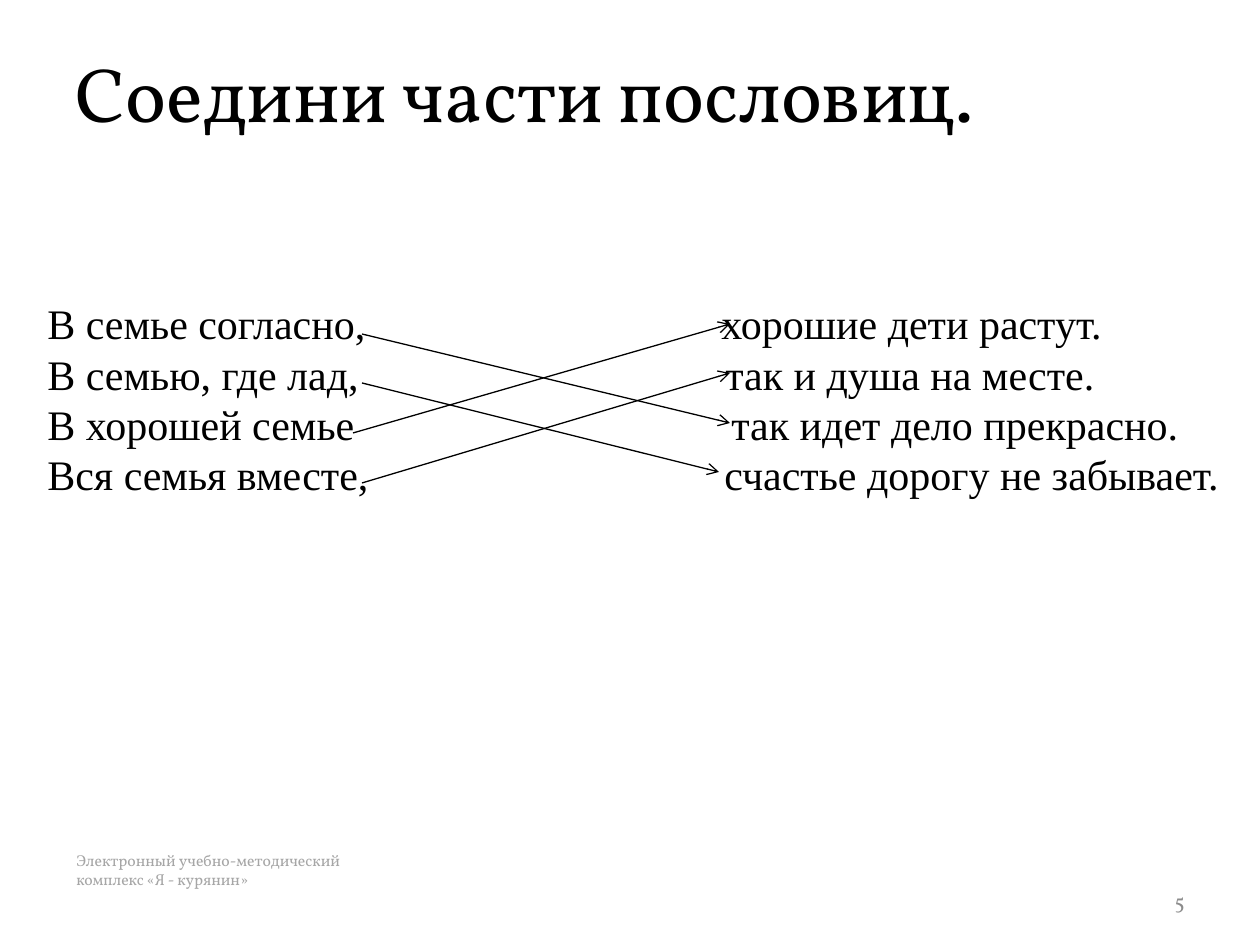
from dataclasses import dataclass

from lxml import etree
from pptx import Presentation, util as u
from pptx.dml.color import RGBColor
from pptx.enum import shapes, text
from pptx.oxml.ns import qn

BLACK = RGBColor(0x00, 0x00, 0x00)
SILVER = RGBColor(0xA6, 0xA6, 0xA6)
GRAY = RGBColor(0x8C, 0x8C, 0x8C)
HEAD = "Vollkorn"
BODY = "Times New Roman"
LEFT, MID = text.PP_ALIGN.LEFT, text.MSO_ANCHOR.MIDDLE


def px(n: int) -> int:
    return round(n * 914400 / 126)


@dataclass
class Label:
    box: tuple[int, int, int, int]
    words: str
    size: int
    color: RGBColor
    align: text.PP_ALIGN = LEFT
    anchor: text.MSO_ANCHOR = MID


@dataclass
class Row:
    start: str
    end: str
    tab: int


@dataclass
class Arrow:
    x1: int
    y1: int
    x2: int
    y2: int


LABELS = [
    Label((64, 845, 630, 50), "Электронный учебно-методический\vкомплекс «Я - курянин»",
          9, SILVER, anchor=text.MSO_ANCHOR.TOP),
    Label((63, 38, 934, 107), "Соедини части пословиц.", 44, BLACK),
    Label((903, 876, 294, 50), "5", 12, GRAY, text.PP_ALIGN.RIGHT),
]
ROWS = [
    Row("В семье согласно,", "хорошие дети растут.", 674),
    Row("В семью, где лад,", "так и душа на месте.", 678),
    Row("В хорошей семье", "так идет дело прекрасно.", 684),
    Row("Вся семья вместе,", "счастье дорогу не забывает.", 677),
]
ARROWS = [
    Arrow(362, 334, 730, 423),
    Arrow(362, 383, 719, 472),
    Arrow(353, 433, 730, 324),
    Arrow(362, 483, 730, 373),
]


def add_frame(slide, box: tuple[int, int, int, int], anchor):
    frame = slide.shapes.add_textbox(*map(px, box)).text_frame
    frame.word_wrap = True
    frame.vertical_anchor = anchor
    return frame


def set_font(para, name: str, size: int, color: RGBColor) -> None:
    para.font.name = name
    para.font.size = u.Pt(size)
    para.font.color.rgb = color


def add_label(slide, label: Label) -> None:
    para = add_frame(slide, label.box, label.anchor).paragraphs[0]
    para.text = label.words
    para.alignment = label.align
    set_font(para, HEAD, label.size, label.color)


def add_rows(slide, rows: list[Row]) -> None:
    frame = add_frame(slide, (35, 290, 1225, 217), MID)
    for i, row in enumerate(rows):
        para = frame.add_paragraph() if i else frame.paragraphs[0]
        para.text = f"{row.start}\t{row.end}"
        para.line_spacing = u.Pt(28.75)
        tabs = etree.SubElement(para._p.get_or_add_pPr(), qn("a:tabLst"))
        etree.SubElement(tabs, qn("a:tab"), pos=str(px(row.tab)), algn="l")
        set_font(para, BODY, 24, BLACK)


def add_arrow(slide, arrow: Arrow) -> None:
    ends = map(px, (arrow.x1, arrow.y1, arrow.x2, arrow.y2))
    link = slide.shapes.add_connector(shapes.MSO_CONNECTOR.STRAIGHT, *ends)
    link.line.color.rgb = BLACK
    link.line.width = u.Pt(0.75)
    etree.SubElement(link.line._get_or_add_ln(), qn("a:tailEnd"), type="arrow")
    etree.SubElement(link._element.spPr, qn("a:effectLst"))


def main() -> None:
    deck = Presentation()
    deck.slide_width, deck.slide_height = px(1260), px(945)
    slide = deck.slides.add_slide(deck.slide_layouts[6])
    for label in LABELS:
        add_label(slide, label)
    add_rows(slide, ROWS)
    for arrow in ARROWS:
        add_arrow(slide, arrow)
    deck.save("out.pptx")


if __name__ == "__main__":
    main()
